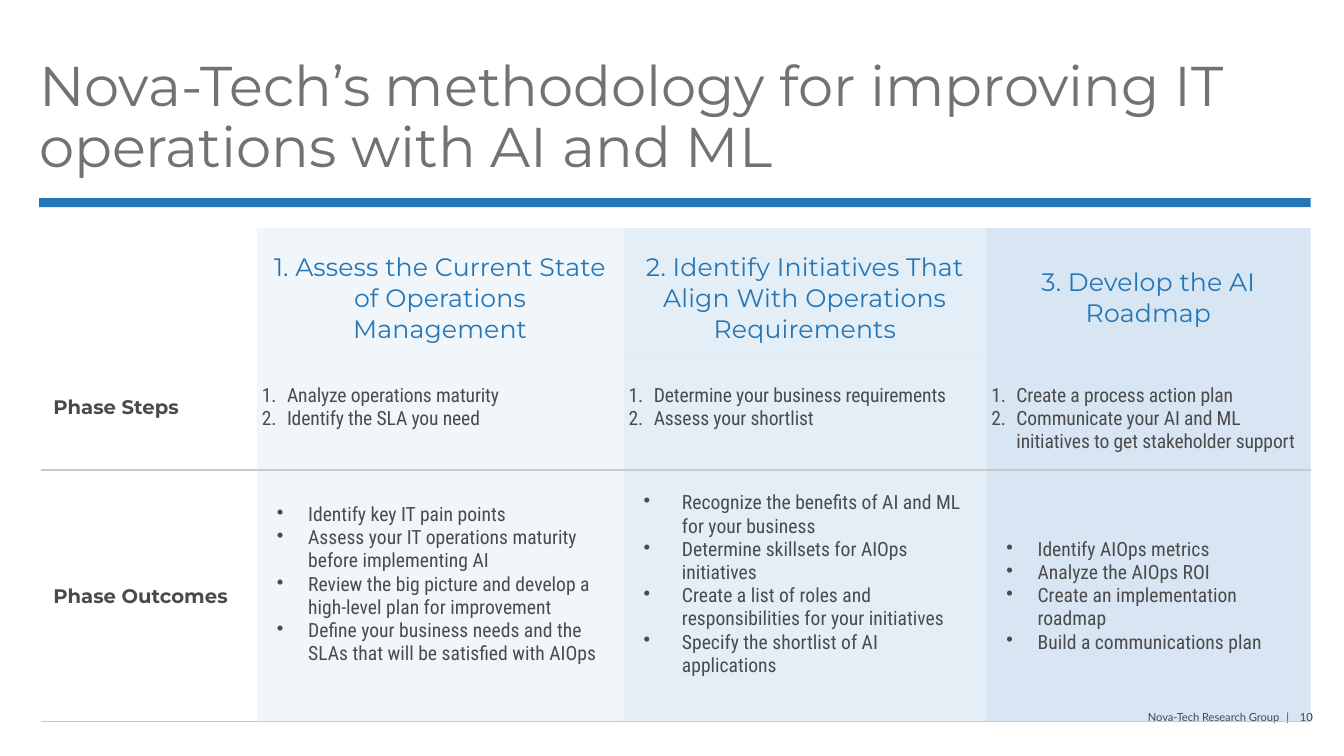
"""Build a slide with a three-phase methodology table for IT operations."""
from lxml import etree
from pptx import Presentation
from pptx import util as u
from pptx.dml import color
from pptx.enum import shapes, text
from pptx.oxml import ns

WIDTH, HEIGHT = u.Inches(13.34), u.Inches(7.5)
HEADING, BODY = "Montserrat", "Roboto Condensed"
BLUE, TINT, GREY, DARK, RULE = "2576B7", "7CADD4", "717272", "4A4A4A", "C9C9C9"
NO_GRID_STYLE = "{2D5ABB26-0587-4C30-8999-92F81FD0307C}"
COLUMN_SHARES = (16.04, 27.29, 26.99, 24.14)
ROW_SHARES = (16.93, 14.93, 32.93)
NUMBERED = ("buAutoNum", {"type": "arabicPeriod"})
BULLETED = ("buChar", {"char": "•"})

PHASES = [
    "1. Assess the Current State of Operations Management",
    "2. Identify Initiatives That Align With Operations Requirements",
    "3. Develop the AI Roadmap",
]
STEPS = [
    ["Analyze operations maturity", "Identify the SLA you need"],
    ["Determine your business requirements", "Assess your shortlist"],
    ["Create a process action plan",
     "Communicate your AI and ML initiatives to get stakeholder support"],
]
OUTCOMES = [
    ["Identify key IT pain points",
     "Assess your IT operations maturity before implementing AI",
     "Review the big picture and develop a high-level plan for improvement",
     "Define your business needs and the SLAs that will be satisfied with AIOps"],
    ["Recognize the benefits of AI and ML for your business",
     "Determine skillsets for AIOps initiatives",
     "Create a list of roles and responsibilities for your initiatives",
     "Specify the shortlist of AI applications"],
    ["Identify AIOps metrics", "Analyze the AIOps ROI",
     "Create an implementation roadmap", "Build a communications plan"],
]
STEP_TOPS = (0.04, 0.04, 0.27)
OUTCOME_BOTTOMS = (0.43, 0.43, 0.2)
OUTCOME_INDENTS = (0.31, 0.38, 0.31)


def rgb(value):
    """Turn a hex string into a colour."""
    return color.RGBColor.from_string(value)


def across(share):
    """Give a percentage of the slide width."""
    return int(WIDTH * share / 100)


def down(share):
    """Give a percentage of the slide height."""
    return int(HEIGHT * share / 100)


def area(left, top, width, height):
    """Give a box from percentages of the slide's size."""
    return across(left), down(top), across(width), down(height)


def add_xml(parent, tag, index=None, **attributes):
    """Add a DrawingML child, at the end unless an index is given."""
    child = etree.Element(ns.qn("a:" + tag), attributes)
    parent.insert(len(parent) if index is None else index, child)
    return child


def style_run(run, font, size, hue, bold=False, tracking=0):
    """Format one run, with tracking in hundredths of a point."""
    run.font.name, run.font.size, run.font.bold = font, u.Pt(size), bold
    run.font.color.rgb = rgb(hue)
    run.font._element.set("spc", str(tracking))


def set_insets(owner, left, top, right, bottom):
    """Set the inner margins of a cell or text frame in inches."""
    owner.margin_left, owner.margin_top = u.Inches(left), u.Inches(top)
    owner.margin_right, owner.margin_bottom = u.Inches(right), u.Inches(bottom)


def add_text_area(slide, box):
    """Add a wrapping text box without margins and return its first paragraph."""
    frame = slide.shapes.add_textbox(*box).text_frame
    frame.word_wrap = True
    set_insets(frame, 0, 0, 0, 0)
    return frame.paragraphs[0]


def add_footer(slide):
    """Add the publisher and page number."""
    footer = add_text_area(slide, area(72, 94, 25.7, 1.8))
    footer.alignment = text.PP_ALIGN.RIGHT
    for words, tracking in (("Nova-Tech Research Group", -5), (" | ", 280), ("10", 10)):
        run = footer.add_run()
        run.text = words
        style_run(run, "Lato", 8, "242424", tracking=tracking)


def add_title(slide):
    """Add the title and the bar beneath it."""
    title = add_text_area(slide, area(2.92, 7.73, 94.6, 16.53))
    title.text = "Nova-Tech’s methodology for improving IT operations with AI and ML"
    title.line_spacing = 0.9
    style_run(title.runs[0], HEADING, 40, GREY)
    bar = slide.shapes.add_shape(shapes.MSO_SHAPE.RECTANGLE, *area(2.92, 26.2, 94.6, 1.2))
    bar.shadow.inherit = False
    bar.fill.solid()
    bar.fill.fore_color.rgb = rgb(BLUE)
    bar.line.fill.background()


def fill_cell(cell, lines, insets, look, marker=None, indent=0, centred=False):
    """Write the lines of a cell, with bullets or numbers if a marker is given."""
    cell.vertical_anchor = text.MSO_ANCHOR.MIDDLE
    set_insets(cell, *insets)
    cell.text_frame.text = "\n".join(lines)
    for paragraph in cell.text_frame.paragraphs:
        style_run(paragraph.runs[0], **look)
        if centred:
            paragraph.alignment = text.PP_ALIGN.CENTER
        if marker:
            tag, attributes = marker
            layout = paragraph._p.get_or_add_pPr()
            layout.set("marL", str(u.Inches(indent)))
            layout.set("indent", str(-u.Inches(indent)))
            add_xml(layout, tag, **attributes)


def tint_cell(cell, opacity):
    """Fill a cell with the tint at a given percentage of opacity."""
    cell.fill.solid()
    cell.fill.fore_color.rgb = rgb(TINT)
    tint = cell._tc.tcPr.find(".//" + ns.qn("a:srgbClr"))
    add_xml(tint, "alpha", val=str(opacity * 1000))


def rule_below(cell):
    """Draw a thin line along the bottom of a cell."""
    rule = add_xml(cell._tc.get_or_add_tcPr(), "lnB", 0, w=str(u.Pt(1)))
    add_xml(add_xml(rule, "solidFill"), "srgbClr", val=RULE)


def add_phase_table(slide):
    """Add the table of phases, steps and outcomes."""
    box = area(3.07, 30.18, sum(COLUMN_SHARES), sum(ROW_SHARES))
    table = slide.shapes.add_table(len(ROW_SHARES), len(COLUMN_SHARES), *box).table
    table.first_row = table.horz_banding = False
    table._tbl.tblPr.find(ns.qn("a:tableStyleId")).text = NO_GRID_STYLE
    for column, share in zip(table.columns, COLUMN_SHARES):
        column.width = across(share)
    for row, share in zip(table.rows, ROW_SHARES):
        row.height = down(share)

    phase_look = dict(font=HEADING, size=18, hue=BLUE, tracking=10)
    label_look = dict(font=HEADING, size=14, hue=DARK, bold=True)
    step_look = dict(font=BODY, size=14, hue="4B4B4B", tracking=-10)
    outcome_look = dict(step_look, tracking=0)

    table.cell(0, 0).fill.background()
    fill_cell(table.cell(1, 0), ["Phase Steps"], (0.12, 0.04, 0, 0.16), label_look)
    fill_cell(table.cell(2, 0), ["Phase Outcomes"], (0.12,) * 4, label_look)
    for index, phase in enumerate(PHASES):
        header, steps, outcomes = (table.cell(row, index + 1) for row in range(3))
        fill_cell(header, [phase], (0.12, 0.24, 0.12, 0.12), phase_look, centred=True)
        fill_cell(steps, STEPS[index], (0.05, STEP_TOPS[index], 0.12, 0.16),
                  step_look, NUMBERED, 0.25)
        fill_cell(outcomes, OUTCOMES[index], (0.2, 0.2, 0.2, OUTCOME_BOTTOMS[index]),
                  outcome_look, BULLETED, OUTCOME_INDENTS[index])
        for cell in (header, steps, outcomes):
            tint_cell(cell, 10 * (index + 1))
    for row in (1, 2):
        for column in range(len(COLUMN_SHARES)):
            rule_below(table.cell(row, column))


def main():
    """Build and save the slide."""
    deck = Presentation()
    deck.slide_width, deck.slide_height = WIDTH, HEIGHT
    slide = deck.slides.add_slide(deck.slide_layouts[6])
    add_footer(slide)
    add_title(slide)
    add_phase_table(slide)
    deck.save("out.pptx")


if __name__ == "__main__":
    main()
